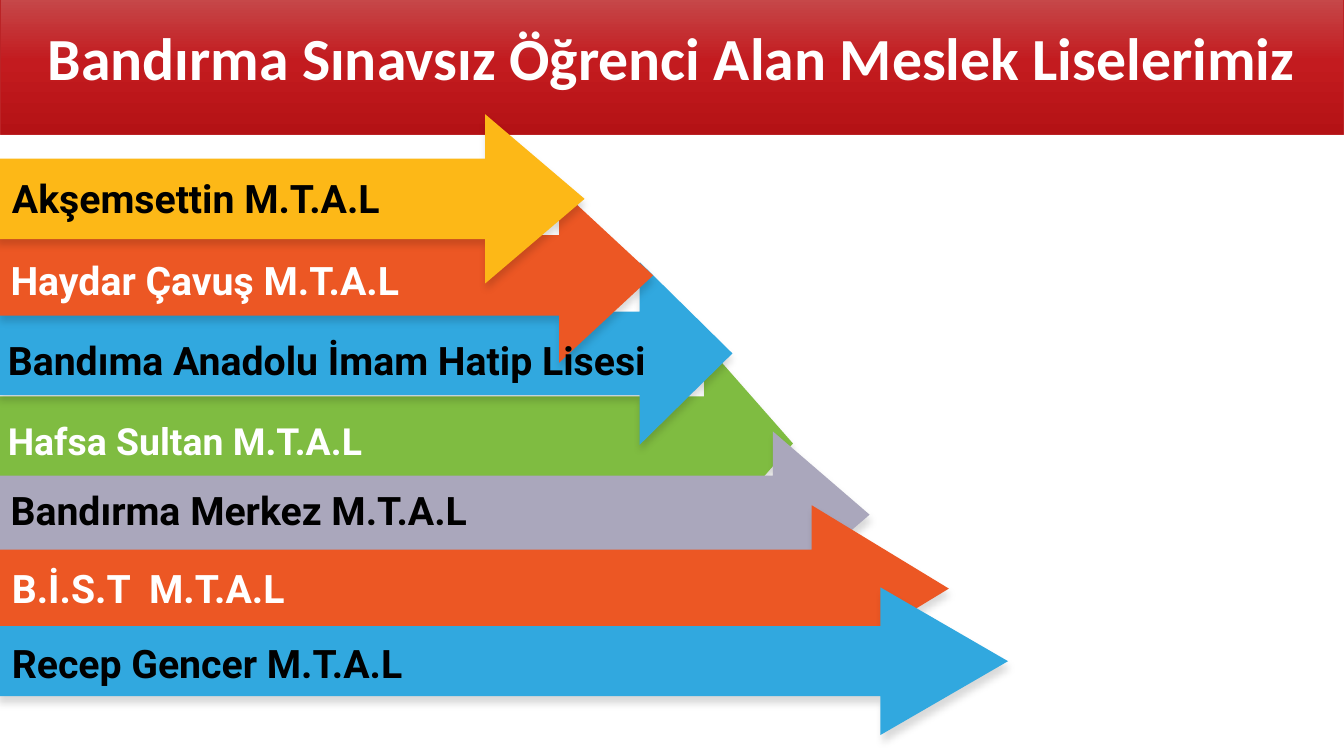
from copy import deepcopy
from dataclasses import dataclass

from lxml.etree import SubElement
from pptx import Presentation
from pptx.dml.color import RGBColor
from pptx.enum.text import MSO_ANCHOR as Anchor, MSO_AUTO_SIZE as AutoSize, PP_ALIGN as Align
from pptx.oxml.ns import qn
from pptx.slide import Slide
from pptx.text.text import _Paragraph as Paragraph
from pptx.util import Inches, Pt

SLIDE_WIDTH = 10
SLIDE_HEIGHT = SLIDE_WIDTH * 9 / 16
BLACK, WHITE = "000000", "FFFFFF"
ORANGE, BLUE = "EC5724", "31A8DF"


@dataclass
class SchoolArrow:
    left: float
    neck: float
    tip: float
    middle: float
    half_shaft: float
    half_head: float
    color: str


@dataclass
class SchoolName:
    text: str
    left: float
    top: float
    width: float
    color: str
    size: int = 21


ARROWS = [
    SchoolArrow(-0.02, 5.24, 5.9, 3.3, 0.35, 0.75, "7FBC41"),
    SchoolArrow(-0.01, 4.76, 5.45, 2.63, 0.31, 0.68, BLUE),
    SchoolArrow(0, 4.16, 4.86, 2.05, 0.3, 0.65, ORANGE),
    SchoolArrow(-0.02, 3.61, 4.35, 1.48, 0.3, 0.63, "FDB817"),
    SchoolArrow(-0.02, 5.75, 6.47, 3.83, 0.29, 0.62, "AAA7BC"),
    SchoolArrow(-0.02, 6.04, 7.06, 4.38, 0.29, 0.62, ORANGE),
    SchoolArrow(-0.02, 6.55, 7.5, 4.92, 0.26, 0.55, BLUE),
]

NAMES = [
    SchoolName("Akşemsettin M.T.A.L", -0.01, 1.25, 4.01, BLACK),
    SchoolName("Haydar Çavuş M.T.A.L", -0.02, 1.86, 5.11, WHITE),
    SchoolName("Bandıma Anadolu İmam Hatip Lisesi", -0.04, 2.45, 5.7, BLACK),
    SchoolName("Hafsa Sultan M.T.A.L", -0.04, 3.06, 6.7, WHITE, 20),
    SchoolName("Bandırma Merkez M.T.A.L", -0.02, 3.57, 4.01, BLACK),
    SchoolName("B.İ.S.T  M.T.A.L", -0.01, 4.15, 5.1, WHITE),
    SchoolName("Recep Gencer M.T.A.L", -0.01, 4.71, 5.7, BLACK),
]


def rgb(color: str) -> RGBColor:
    return RGBColor.from_string(color)


def add_run(paragraph: Paragraph, text: str, font: str, size: int, color: str) -> None:
    run = paragraph.add_run()
    run.text = text
    run.font.name = font
    run.font.size = Pt(size)
    run.font.bold = True
    run.font.color.rgb = rgb(color)


def fill_heading(slide: Slide, text: str) -> None:
    heading = slide.shapes.title
    heading.left, heading.top = Inches(0), Inches(-0.09)
    heading.width, heading.height = Inches(SLIDE_WIDTH), Inches(1.09)

    heading.fill.gradient()
    heading.fill.gradient_angle = 270
    stop_list = heading._element.spPr.find(f".//{qn('a:gsLst')}")
    stop_list.append(deepcopy(stop_list[0]))
    shades = [(0, "C65051"), (0.5, "C31B1F"), (1, "B41215")]
    for stop, (position, color) in zip(heading.fill.gradient_stops, shades):
        stop.position = position
        stop.color.rgb = rgb(color)
    heading.line.color.rgb = rgb("BB2326")
    heading.line.width = Pt(0.5)

    frame = heading.text_frame
    frame.word_wrap = True
    frame.auto_size = AutoSize.NONE
    frame.vertical_anchor = Anchor.MIDDLE
    paragraph = frame.paragraphs[0]
    paragraph.alignment = Align.CENTER
    paragraph.line_spacing = 0.9
    add_run(paragraph, text, "Calibri", 32, WHITE)


def draw_arrow(slide: Slide, arrow: SchoolArrow) -> None:
    upper = [
        (arrow.neck, -arrow.half_head),
        (arrow.neck, -arrow.half_shaft),
        (arrow.left, -arrow.half_shaft),
    ]
    lower = [(x, -offset) for x, offset in reversed(upper)]
    outline = [
        (Inches(x), Inches(arrow.middle + offset))
        for x, offset in [(arrow.tip, 0), *upper, *lower]
    ]
    builder = slide.shapes.build_freeform(*outline[0])
    builder.add_line_segments(outline[1:], close=True)
    shape = builder.convert_to_shape()
    shape.fill.solid()
    shape.fill.fore_color.rgb = rgb(arrow.color)
    shape.line.fill.background()
    shape.shadow.inherit = False
    effects = shape._element.spPr.find(qn("a:effectLst"))
    shadow = SubElement(
        effects, qn("a:outerShdw"), blurRad=str(Pt(4)), dist=str(Pt(3)),
        dir="5400000", algn="ctr", rotWithShape="0",
    )
    shade = SubElement(shadow, qn("a:srgbClr"), val=BLACK)
    SubElement(shade, qn("a:alpha"), val="15000")


def write_name(slide: Slide, name: SchoolName) -> None:
    box = slide.shapes.add_textbox(
        Inches(name.left), Inches(name.top), Inches(name.width), Inches(0.45)
    )
    box.text_frame.word_wrap = True
    box.text_frame.auto_size = AutoSize.SHAPE_TO_FIT_TEXT
    add_run(box.text_frame.paragraphs[0], name.text, "Roboto", name.size, name.color)


def main() -> None:
    deck = Presentation()
    deck.slide_width, deck.slide_height = Inches(SLIDE_WIDTH), Inches(SLIDE_HEIGHT)
    slide = deck.slides.add_slide(deck.slide_layouts[5])
    fill_heading(slide, "Bandırma Sınavsız Öğrenci Alan Meslek Liselerimiz")
    for arrow in ARROWS:
        draw_arrow(slide, arrow)
    for name in NAMES:
        write_name(slide, name)
    deck.save("out.pptx")


if __name__ == "__main__":
    main()
